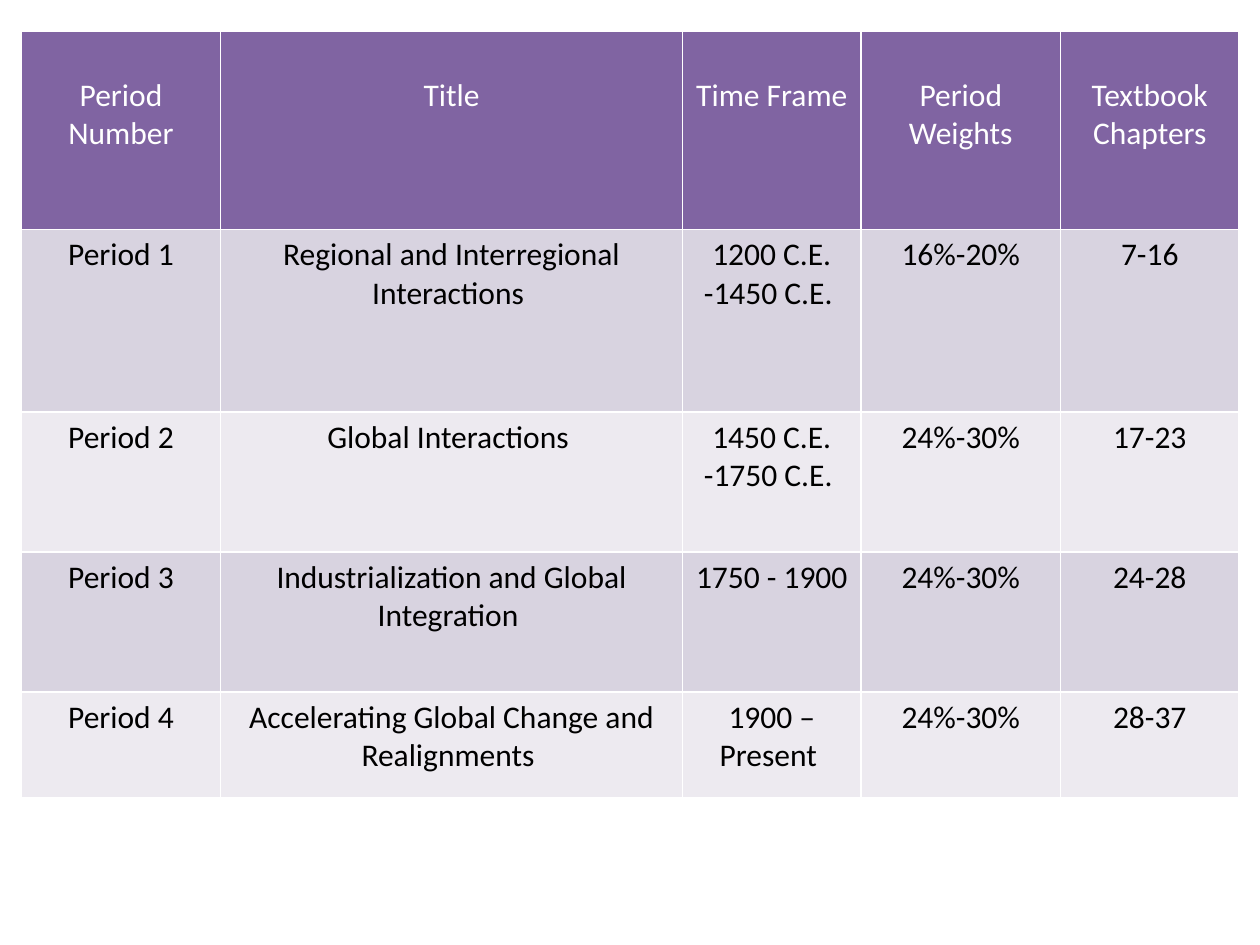
from pptx import Presentation
from pptx.dml.color import RGBColor
from pptx.enum.text import PP_ALIGN
from pptx.util import Cm, Pt

HEADER = ["Period Number", "Title", "Time Frame", "Period Weights", "Textbook Chapters"]
PERIODS = [
    ["Period 1", "Regional and Interregional Interactions ", "1200 C.E. -1450 C.E. ", "16%-20%", "7-16"],
    ["Period 2", "Global Interactions ", "1450 C.E. -1750 C.E. ", "24%-30%", "17-23"],
    ["Period 3", "Industrialization and Global Integration ", "1750 - 1900", "24%-30%", "24-28"],
    ["Period 4", "Accelerating Global Change and Realignments ", "1900 – Present ", "24%-30%", "28-37"],
]
COLUMN_WIDTHS = [4.02, 9.31, 3.6, 4.02, 3.6]
ROW_HEIGHTS = [3.99, 3.68, 2.82, 2.82, 2.13]
LEFT, TOP = 0.43, 0.64
HEADER_MARGIN = 0.9  # lowers the headings by one line

FONT, FONT_SIZE = "Calibri", Pt(18)
PURPLE = RGBColor(0x80, 0x64, 0xA2)
BANDS = [RGBColor(0xD8, 0xD3, 0xE0), RGBColor(0xED, 0xEA, 0xF0)]
WHITE = RGBColor(0xFF, 0xFF, 0xFF)
BLACK = RGBColor(0x00, 0x00, 0x00)


def fill_cell(cell, text, fill_color, text_color):
    cell.fill.solid()
    cell.fill.fore_color.rgb = fill_color
    cell.text_frame.text = text
    paragraph = cell.text_frame.paragraphs[0]
    paragraph.alignment = PP_ALIGN.CENTER
    font = paragraph.runs[0].font
    font.name, font.size, font.bold = FONT, FONT_SIZE, False
    font.color.rgb = text_color


def main():
    presentation = Presentation()
    presentation.slide_width, presentation.slide_height = Cm(25.4), Cm(19.05)
    slide = presentation.slides.add_slide(presentation.slide_layouts[6])

    # The default table style draws the white cell borders.
    table = slide.shapes.add_table(
        len(ROW_HEIGHTS), len(COLUMN_WIDTHS), Cm(LEFT), Cm(TOP),
        Cm(sum(COLUMN_WIDTHS)), Cm(sum(ROW_HEIGHTS))).table
    for column, width in zip(table.columns, COLUMN_WIDTHS):
        column.width = Cm(width)
    for row, height in zip(table.rows, ROW_HEIGHTS):
        row.height = Cm(height)

    for cell, heading in zip(table.rows[0].cells, HEADER):
        fill_cell(cell, heading, PURPLE, WHITE)
        cell.margin_top = Cm(HEADER_MARGIN)
    for index, period in enumerate(PERIODS):
        for cell, text in zip(table.rows[index + 1].cells, period):
            fill_cell(cell, text, BANDS[index % 2], BLACK)

    presentation.save("out.pptx")


if __name__ == "__main__":
    main()
